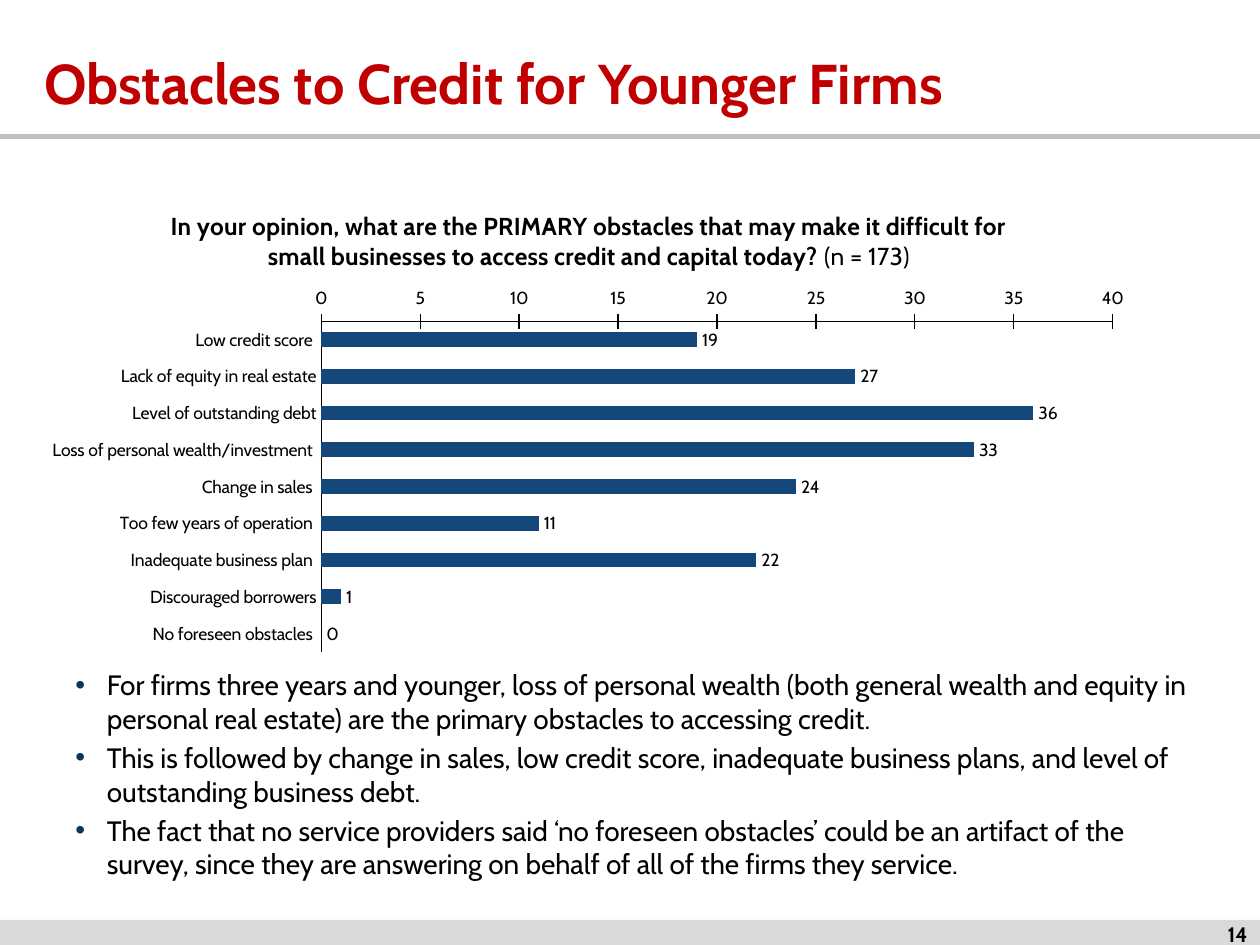
from lxml import etree
from pptx import Presentation
from pptx.chart.data import CategoryChartData
from pptx.dml.color import RGBColor
from pptx.enum.chart import XL_CHART_TYPE, XL_LABEL_POSITION, XL_TICK_LABEL_POSITION, XL_TICK_MARK
from pptx.enum.shapes import MSO_CONNECTOR, MSO_SHAPE
from pptx.enum.text import MSO_ANCHOR, PP_ALIGN
from pptx.oxml.ns import qn
from pptx.util import Pt

BAR = XL_CHART_TYPE.BAR_CLUSTERED
OUTSIDE = XL_LABEL_POSITION.OUTSIDE_END
NEXT_TO_AXIS = XL_TICK_LABEL_POSITION.NEXT_TO_AXIS
NO_TICK, CROSS_TICK = XL_TICK_MARK.NONE, XL_TICK_MARK.CROSS
RECT, STRAIGHT = MSO_SHAPE.RECTANGLE, MSO_CONNECTOR.STRAIGHT
TOP, MIDDLE = MSO_ANCHOR.TOP, MSO_ANCHOR.MIDDLE
LEFT, RIGHT = PP_ALIGN.LEFT, PP_ALIGN.RIGHT

FONT = "Cabin"
BLACK, RED, NAVY, BLUE = "000000", "C00000", "0F355C", "14477A"
WIDTH, HEIGHT = 720, 540

OBSTACLES = [
    ("Low credit score ", 19),
    ("Lack of equity in real estate", 27),
    ("Level of outstanding debt", 36),
    ("Loss of personal wealth/investment ", 33),
    ("Change in sales ", 24),
    ("Too few years of operation ", 11),
    ("Inadequate business plan ", 22),
    ("Discouraged borrowers", 1),
    ("No foreseen obstacles ", 0),
]
QUESTION = ("In your opinion, what are the PRIMARY obstacles that may make it "
            "difficult for small businesses to access credit and capital today? ")
FINDINGS = [
    "For firms three years and younger, loss of personal wealth (both general wealth "
    "and equity in personal real estate) are the primary obstacles to accessing credit.",
    "This is followed by change in sales, low credit score, inadequate business plans, "
    "and level of outstanding business debt.",
    "The fact that no service providers said ‘no foreseen obstacles’ could be an artifact "
    "of the survey, since they are answering on behalf of all of the firms they service.",
]


def rgb(color):
    return RGBColor.from_string(color)


def set_font(font, size, color=BLACK, bold=False):
    font.name, font.size, font.bold = FONT, Pt(size), bold
    font.color.rgb = rgb(color)


def add_text(p, text, size, color=BLACK, bold=False, align=None):
    r = p.add_run()
    r.text = text
    set_font(r.font, size, color, bold)
    if align is not None:
        p.alignment = align


def set_frame(tf, anchor, margins=(7.2, 3.6)):
    tf.word_wrap = True
    tf.vertical_anchor = anchor
    tf.margin_left = tf.margin_right = Pt(margins[0])
    tf.margin_top = tf.margin_bottom = Pt(margins[1])


def add_bullet(p, color, indent):
    pPr = p._p.get_or_add_pPr()
    pPr.set("marL", str(Pt(indent)))
    pPr.set("indent", str(-Pt(indent)))
    clr = etree.SubElement(pPr, qn("a:buClr"))
    etree.SubElement(clr, qn("a:srgbClr"), val=color)
    etree.SubElement(pPr, qn("a:buFont"), typeface="Arial")
    etree.SubElement(pPr, qn("a:buChar"), char="•")


def add_header(s, x, y, w, h):
    rule = s.shapes.add_connector(STRAIGHT, Pt(0), Pt(78), Pt(WIDTH), Pt(78))
    rule.line.color.rgb = rgb("BFBFBF")
    rule.line.width = Pt(3)
    etree.SubElement(rule._element.spPr, qn("a:effectLst"))
    sp = s.shapes.title
    sp.left, sp.top, sp.width, sp.height = Pt(x), Pt(y), Pt(w), Pt(h)
    set_frame(sp.text_frame, MIDDLE)
    add_text(sp.text_frame.paragraphs[0], "Obstacles to Credit for Younger Firms",
             32, RED, bold=True, align=LEFT)


def add_footer(s, x, y, w, h):
    band = s.shapes.add_shape(RECT, Pt(x), Pt(y), Pt(w), Pt(h))
    band.shadow.inherit = False
    band.fill.solid()
    band.fill.fore_color.rgb = rgb("D9D9D9")
    band.line.fill.background()
    sp = s.shapes.add_textbox(Pt(x + w - 168), Pt(y + 2), Pt(168), Pt(h - 2))
    set_frame(sp.text_frame, MIDDLE, (7.2, 0))
    add_text(sp.text_frame.paragraphs[0], "14", 12, bold=True, align=RIGHT)


def set_plot_area(chart, x, y, w, h):
    area = chart._chartSpace.chart.plotArea
    for old in area.findall(qn("c:layout")):
        area.remove(old)
    layout = etree.Element(qn("c:layout"))
    manual = etree.SubElement(layout, qn("c:manualLayout"))
    settings = [("layoutTarget", "inner"), ("xMode", "edge"), ("yMode", "edge"),
                ("x", x), ("y", y), ("w", w), ("h", h)]
    for tag, val in settings:
        etree.SubElement(manual, qn("c:" + tag), val=str(val))
    area.insert(0, layout)


def format_axis(axis, tick):
    axis.has_major_gridlines = False
    axis.major_tick_mark, axis.minor_tick_mark = tick, NO_TICK
    axis.tick_label_position = NEXT_TO_AXIS
    axis.format.line.color.rgb = rgb(BLACK)
    axis.format.line.width = Pt(0.75)
    set_font(axis.tick_labels.font, 10)


def add_obstacle_chart(s, x, y, w, h):
    data = CategoryChartData()
    data.categories = [name for name, _ in OBSTACLES]
    data.add_series("Series 1", [value for _, value in OBSTACLES])
    chart = s.shapes.add_chart(BAR, Pt(x), Pt(y), Pt(w), Pt(h), data).chart
    set_font(chart.font, 10)
    chart.has_legend = False
    chart.has_title = True
    p = chart.chart_title.text_frame.paragraphs[0]
    add_text(p, QUESTION, 14, bold=True)
    add_text(p, "(n = 173)", 14)
    chart.chart_title.include_in_layout = False
    set_plot_area(chart, 0.26, 0.28, 0.71, 0.7)

    format_axis(chart.category_axis, NO_TICK)
    chart.category_axis.reverse_order = True
    axis = chart.value_axis
    format_axis(axis, CROSS_TICK)
    axis.minimum_scale, axis.maximum_scale, axis.major_unit = 0, 40, 5

    plot = chart.plots[0]
    plot.gap_width = 150
    plot.vary_by_categories = False
    fill = plot.series[0].format.fill
    fill.solid()
    fill.fore_color.rgb = rgb(BLUE)
    plot.has_data_labels = True
    labels = plot.data_labels
    labels.show_value = True
    labels.position = OUTSIDE
    set_font(labels.font, 10)


def add_findings(s, x, y, w, h):
    tf = s.shapes.add_textbox(Pt(x), Pt(y), Pt(w), Pt(h)).text_frame
    set_frame(tf, TOP)
    for i, text in enumerate(FINDINGS):
        p = tf.add_paragraph() if i else tf.paragraphs[0]
        p.space_before = Pt(3.2)
        add_bullet(p, NAVY, 18)
        add_text(p, text, 16)


def main():
    prs = Presentation()
    prs.slide_width, prs.slide_height = Pt(WIDTH), Pt(HEIGHT)
    s = prs.slides.add_slide(prs.slide_layouts[5])
    add_header(s, 18, 23, 691, 48)
    add_footer(s, 0, 525.6, WIDTH, 14.4)
    add_obstacle_chart(s, 18, 108, 637, 270)
    add_findings(s, 36, 378, 657, 132)
    prs.save("out.pptx")


if __name__ == "__main__":
    main()
